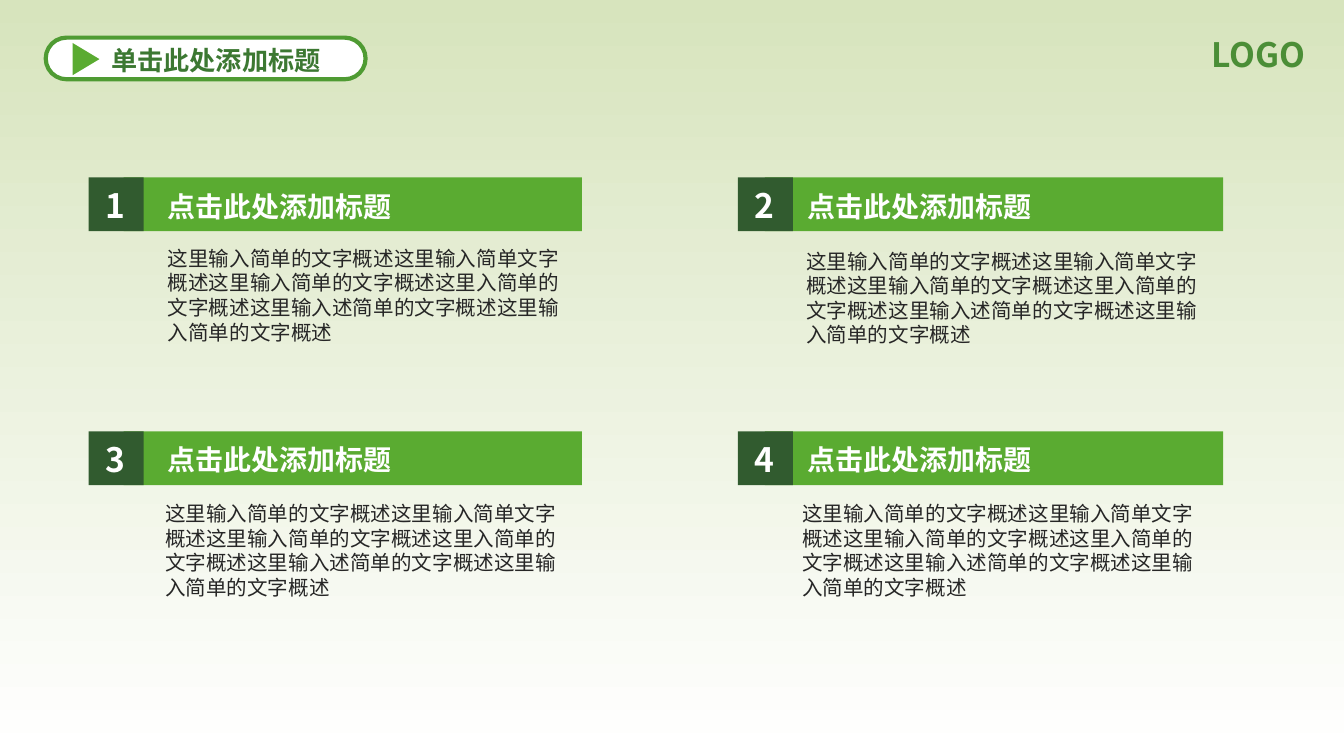
from lxml import etree
from pptx import Presentation
from pptx.dml.color import RGBColor
from pptx.enum.shapes import MSO_SHAPE
from pptx.enum.text import MSO_AUTO_SIZE, PP_ALIGN
from pptx.oxml.ns import qn
from pptx.util import Inches, Pt

RECTANGLE = MSO_SHAPE.RECTANGLE
ROUNDED = MSO_SHAPE.ROUNDED_RECTANGLE
TRIANGLE = MSO_SHAPE.ISOSCELES_TRIANGLE
GROW = MSO_AUTO_SIZE.SHAPE_TO_FIT_TEXT
LEFT, CENTER, RIGHT = PP_ALIGN.LEFT, PP_ALIGN.CENTER, PP_ALIGN.RIGHT

COLUMNS, ROWS = 100, 56.25
CELL = Inches(0.1)
HEADING_FONT = "Noto Sans CJK SC"
BODY_FONT = "Calibri"
GREEN, DARK_GREEN, WHITE = "5AAB31", "315B2F", "FFFFFF"

CARD_TITLE = "点击此处添加标题"
SUMMARY = (
    "这里输入简单的文字概述这里输入简单文字概述这里输入简单的文字概述"
    "这里入简单的文字概述这里输入述简单的文字概述这里输入简单的文字概述"
)
CARD_LEFTS = (6.6, 54.9)
CARD_TOPS = (13.2, 32.1)
BAR_OFFSETS = (2.6, 2)
TITLE_OFFSETS = (4.9, 4.2)
TITLE_DROPS = (0.4, 0.3)
SUMMARY_FRAMES = (
    ((11.5, 17.8, 31.8, 8.4), (59, 18, 32.4, 8.4)),
    ((11.3, 36.8, 32.4, 8.4), (58.7, 36.8, 32.4, 8.4)),
)


def color(hex_value):
    return RGBColor.from_string(hex_value)


def cells(*lengths):
    return [round(length * CELL) for length in lengths]


def paint_background(slide, top, bottom):
    fill = slide.background.fill
    fill.gradient()
    fill.gradient_angle = 270
    for stop, hex_value, position in zip(fill.gradient_stops, (top, bottom), (0, 1)):
        stop.color.rgb = color(hex_value)
        stop.position = position


def add_block(shapes, kind, frame, fill, corner=None, outline=None):
    block = shapes.add_shape(kind, *cells(*frame))
    block.shadow.inherit = False
    block.fill.solid()
    block.fill.fore_color.rgb = color(fill)
    if corner is not None:
        block.adjustments[0] = corner
    if outline:
        block.line.color.rgb = color(outline)
        block.line.width = Pt(2.25)
    else:
        block.line.fill.background()
    return block


def add_text(shapes, frame, text, size, hex_value, face=HEADING_FONT,
             align=LEFT, bold=True, wrap=True):
    label = shapes.add_textbox(*cells(*frame)).text_frame
    label.word_wrap = wrap
    label.auto_size = GROW
    paragraph = label.paragraphs[0]
    paragraph.text = text
    paragraph.alignment = align
    font = paragraph.font
    font.size = Pt(size)
    font.bold = bold
    font.color.rgb = color(hex_value)
    font.name = face
    defaults = paragraph._p.pPr.find(qn("a:defRPr"))
    etree.SubElement(defaults, qn("a:ea")).set("typeface", HEADING_FONT)


def add_card(slide, row, column):
    left, top = CARD_LEFTS[column], CARD_TOPS[row]
    number = str(row * len(CARD_LEFTS) + column + 1)
    title_frame = (left + TITLE_OFFSETS[column], top + TITLE_DROPS[row], 22.9, 3.5)
    card = slide.shapes.add_group_shape().shapes
    add_block(card, ROUNDED, (left + BAR_OFFSETS[column], top, 34.1, 4), GREEN, corner=0)
    add_text(card, SUMMARY_FRAMES[row][column], SUMMARY, 11, "262626",
             face=BODY_FONT, bold=False)
    add_text(card, title_frame, CARD_TITLE, 15, WHITE)
    add_block(card, RECTANGLE, (left, top, 4.1, 4), DARK_GREEN)
    add_text(card, (left + 0.2, top + 0.1, 3.6, 4), number, 18, WHITE, align=CENTER)


def add_header(slide):
    header = slide.shapes.add_group_shape().shapes
    add_block(header, ROUNDED, (3.4, 2.8, 23.8, 3.1), WHITE, corner=0.5, outline="4F9B33")
    add_text(header, (7.3, 2.8, 17.7, 3.4), "单击此处添加标题", 14, "3C7832", wrap=False)
    pointer = add_block(header, TRIANGLE, (5.2, 3.4, 2.4, 2), GREEN)
    pointer.rotation = 90


def main():
    presentation = Presentation()
    presentation.slide_width, presentation.slide_height = cells(COLUMNS, ROWS)
    slide = presentation.slides.add_slide(presentation.slide_layouts[6])
    paint_background(slide, "D7E4BD", WHITE)
    for column in range(len(CARD_LEFTS)):
        for row in range(len(CARD_TOPS)):
            add_card(slide, row, column)
    add_header(slide)
    add_text(slide.shapes, (82.9, 2, 15.2, 4), "LOGO", 18, "4B8E37", align=RIGHT)
    presentation.save("out.pptx")


if __name__ == "__main__":
    main()
